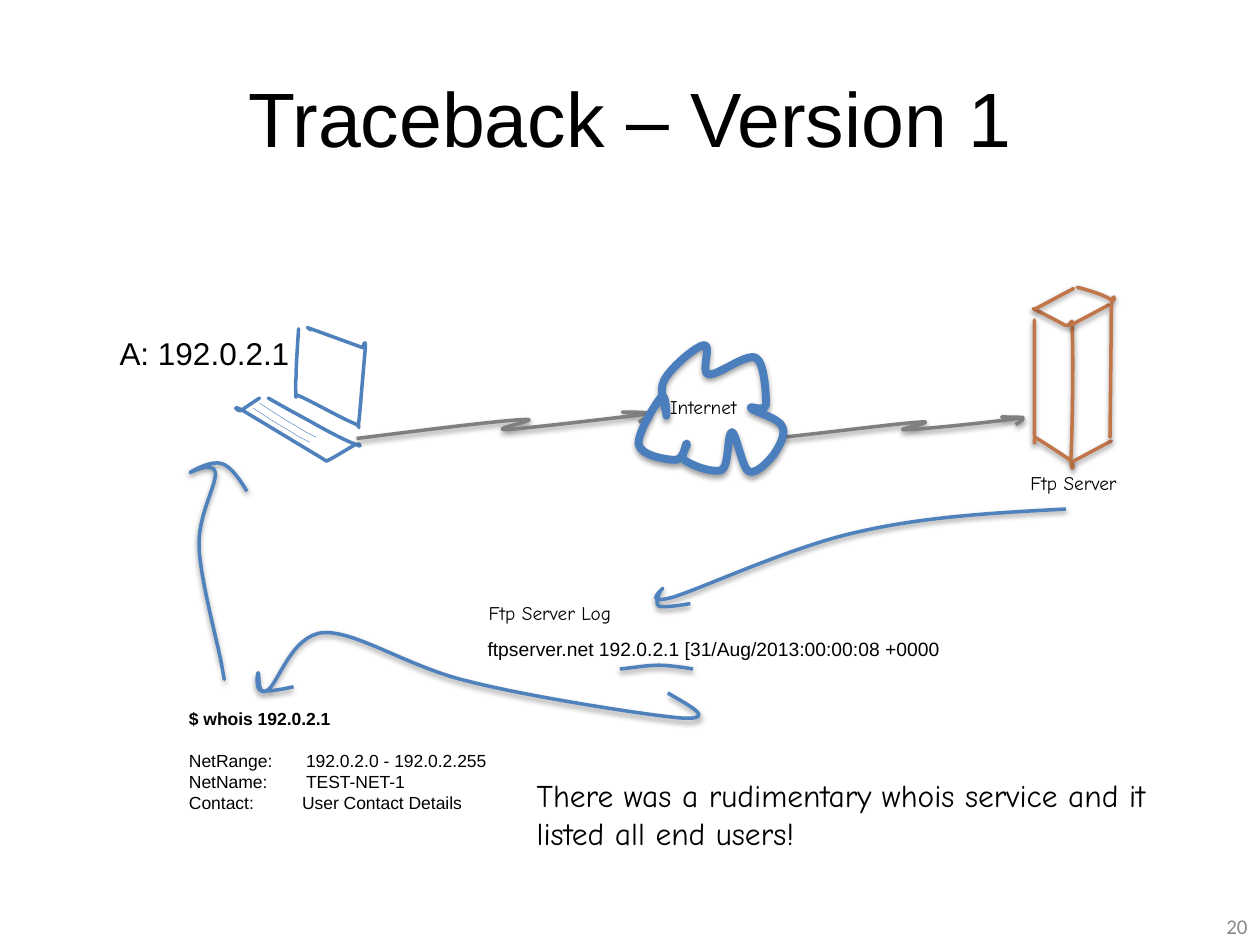
from dataclasses import dataclass

from lxml import etree
from pptx import Presentation
from pptx.dml.color import RGBColor
from pptx.enum.shapes import MSO_CONNECTOR
from pptx.enum.text import MSO_ANCHOR, MSO_AUTO_SIZE, PP_ALIGN
from pptx.oxml.ns import qn
from pptx.util import Cm, Pt

STRAIGHT = MSO_CONNECTOR.STRAIGHT
MIDDLE, TOP = MSO_ANCHOR.MIDDLE, MSO_ANCHOR.TOP
LEFT, CENTER, RIGHT = PP_ALIGN.LEFT, PP_ALIGN.CENTER, PP_ALIGN.RIGHT
FIT, FIXED = MSO_AUTO_SIZE.SHAPE_TO_FIT_TEXT, MSO_AUTO_SIZE.NONE
GRID = Cm(2.54) // 100


@dataclass(frozen=True)
class Theme:
    """Colours, fonts, type sizes and line widths."""
    ink: str = "000000"
    muted: str = "898989"
    blue: str = "4F81BD"
    cloud: str = "4B7EBC"
    wire: str = "7F7F7F"
    server: str = "C1764A"
    sans: str = "Arial"
    hand: str = "Comic Neue"
    page: str = "Calibri"
    title: int = 44
    large: int = 18
    number: int = 12
    label: int = 11
    small: int = 10
    line: float = 2
    thick: float = 4.5
    thin: float = 0.25


T = Theme()

SCREEN = [(237, 261), (236, 276, 235, 290, 235, 299), (234, 308, 235, 312, 235, 315),
          (236, 317, 231, 311, 239, 315), (246, 318, 273, 333, 281, 336),
          (288, 339, 283, 343, 285, 333), (286, 323, 289, 286, 290, 276),
          (290, 267, 288, 276, 288, 276), (244, 260), (244, 260), (247, 262)]
BASE = [(213, 316), (225, 323, 238, 330, 249, 336), (261, 343, 277, 351, 283, 353),
        (288, 356, 286, 351, 282, 353), (278, 355, 264, 364, 259, 366), (256, 364),
        (193, 326), (182, 320, 189, 327, 191, 326), (194, 324, 206, 316, 206, 316)]
KEYS = [(201, 324), (212, 331, 222, 338, 230, 342), (237, 347, 246, 351, 246, 351)]
WIRES = [
    [(283, 348), (339, 341, 395, 334, 415, 333), (435, 332, 386, 341, 402, 341),
     (417, 340, 495, 331, 510, 329), (526, 327, 494, 327, 494, 327),
     (495, 327, 512, 328, 514, 329), (516, 330, 507, 335, 507, 335)],
    [(622, 347), (668, 342, 714, 336, 731, 335), (747, 334, 706, 342, 719, 341),
     (732, 341, 796, 334, 809, 332), (821, 331, 795, 331, 795, 331),
     (796, 331, 810, 331, 812, 332), (813, 333, 806, 337, 806, 337)],
]
CLOUD = [(608, 321), (608, 314, 607, 288, 600, 284), (592, 280, 569, 299, 562, 297),
         (556, 296, 565, 273, 559, 274), (553, 274, 532, 292, 527, 302),
         (522, 311, 530, 328, 529, 330), (529, 332, 529, 311, 525, 315),
         (521, 319, 505, 345, 507, 353), (509, 362, 530, 365, 536, 365),
         (543, 365, 544, 352, 545, 352), (547, 352, 539, 362, 543, 365),
         (548, 369, 566, 376, 573, 373), (579, 369, 577, 343, 581, 343),
         (584, 343, 589, 371, 594, 374), (600, 377, 609, 367, 614, 361),
         (618, 355, 624, 345, 621, 339), (619, 332, 599, 327, 596, 324),
         (594, 321, 607, 328, 608, 321)]
FRONT = [(821, 254), (821, 291, 821, 329, 821, 345), (822, 360, 819, 344, 823, 348),
         (828, 351, 845, 362, 849, 365), (854, 367, 850, 380, 850, 363),
         (851, 346, 852, 281, 851, 264), (851, 246, 851, 261, 845, 258),
         (840, 255, 820, 245, 820, 245)]
SIDE = [(855, 228), (867, 231, 878, 235, 882, 238), (887, 241, 883, 227, 882, 245),
        (882, 263, 881, 347, 881, 347)]
EDGES = [(850, 258), (852, 366), (822, 245)]
TRACES = [
    [(846, 404), (790, 407, 734, 410, 682, 422), (630, 433, 560, 466, 534, 474),
     (508, 481, 528, 466, 526, 467), (524, 468, 519, 479, 523, 481),
     (527, 483, 548, 479, 548, 479)],
    [(492, 531), (503, 530, 513, 528, 523, 528), (533, 528, 550, 531, 550, 531)],
    [(530, 550), (549, 561, 568, 571, 542, 570), (516, 568, 420, 553, 373, 541),
     (325, 530, 284, 501, 257, 502), (231, 504, 221, 543, 212, 548),
     (204, 554, 206, 534, 205, 534), (204, 534, 203, 547, 207, 548),
     (212, 550, 233, 545, 233, 545)],
]
RETURN = [(177, 534), (178, 539, 179, 545, 176, 528), (173, 511, 159, 460, 158, 434),
          (157, 409, 172, 385, 171, 375), (169, 365, 150, 376, 151, 375),
          (152, 374, 168, 365, 176, 368), (183, 370, 190, 380, 196, 390)]


def bend(shape, rows):
    """Turn the straight segments that have handles into cubic curves."""
    segs = list(shape._element.iter(qn("a:lnTo")))
    for seg, row in zip(segs, rows[1:]):
        if len(row) == 6:
            seg.tag = qn("a:cubicBezTo")
            for i in (0, 1):
                x, y = row[2 * i:2 * i + 2]
                knob = etree.Element(qn("a:pt"), x=str(x * GRID - shape.left),
                                     y=str(y * GRID - shape.top))
                seg.insert(i, knob)


def ink(shape, hue, width, shade, cap="flat"):
    """Set the line of a shape and its optional soft shadow."""
    shape.line.color.rgb = RGBColor.from_string(hue)
    shape.line.width = Pt(width)
    prop = shape._element.spPr
    prop.find(qn("a:ln")).set("cap", cap)
    fx = etree.SubElement(prop, qn("a:effectLst"))
    if shade:
        blur = etree.SubElement(fx, qn("a:outerShdw"), blurRad="40000", dist="20000",
                                dir="5400000", rotWithShape="0")
        tone = etree.SubElement(blur, qn("a:srgbClr"), val=T.ink)
        etree.SubElement(tone, qn("a:alpha"), val="38000")


def sketch(shapes, rows, hue, width=T.line, shade=True, cap="flat", close=False):
    """Draw one unfilled hand-drawn stroke."""
    ends = [(row[-2] * GRID, row[-1] * GRID) for row in rows]
    pen = shapes.build_freeform(*ends[0])
    pen.add_line_segments(ends[1:], close=close)
    shape = pen.convert_to_shape()
    bend(shape, rows)
    shape.fill.background()
    ink(shape, hue, width, shade, cap)


def edge(shapes, x, y):
    """Draw one slanted edge of the server."""
    ends = [v * GRID for v in (x, y, x + 30, y - 16)]
    ink(shapes.add_connector(STRAIGHT, *ends), T.server, T.line, True, "rnd")


def write(para, text, size, font=T.sans, hue=T.ink, bold=False):
    """Add one run to a paragraph."""
    run = para.add_run()
    run.text = text
    run.font.name, run.font.size, run.font.bold = font, Pt(size), bold
    run.font.color.rgb = RGBColor.from_string(hue)


def box(slide, place, wrap=False, fit=FIT, anchor=TOP, align=LEFT):
    """Add a text box and return its frame."""
    frame = slide.shapes.add_textbox(*(Cm(v) for v in place)).text_frame
    frame.word_wrap, frame.auto_size = wrap, fit
    frame.vertical_anchor = anchor
    frame.paragraphs[0].alignment = align
    return frame


def label(slide, place, text, size=T.label, font=T.sans, hue=T.ink, **look):
    """Add a text box with a single run."""
    write(box(slide, place, **look).paragraphs[0], text, size, font, hue)


def laptop(slide):
    """Draw the laptop as a group."""
    parts = slide.shapes.add_group_shape().shapes
    for rows in (SCREEN, BASE):
        sketch(parts, rows, T.blue, shade=False, cap="rnd")
    for dx, dy in ((0, 0), (5, -4)):
        rows = [tuple(v + (dy if i % 2 else dx) for i, v in enumerate(row)) for row in KEYS]
        sketch(parts, rows, T.blue, T.thin, shade=False)


def server(slide):
    """Draw the server as a group."""
    parts = slide.shapes.add_group_shape().shapes
    sketch(parts, FRONT, T.server, cap="rnd")
    for x, y in EDGES:
        edge(parts, x, y)
    sketch(parts, SIDE, T.server, cap="rnd")


def lookup(slide):
    """Write the whois query and its answer."""
    frame = box(slide, (3.56, 14.15, 6.6, 2.82))
    head = frame.paragraphs[0]
    write(head, "$ whois 192.0.2.1", T.small, bold=True)
    head.space_after = Pt(12)
    for key, value, stop in (("NetRange:", "192.0.2.0 - 192.0.2.255", 2.36),
                             ("NetName:", "TEST-NET-1", 2.36),
                             ("Contact:", "User Contact Details", 2.28)):
        para = frame.add_paragraph()
        stops = etree.SubElement(para._p.get_or_add_pPr(), qn("a:tabLst"))
        etree.SubElement(stops, qn("a:tab"), pos=str(Cm(stop)), algn="l")
        write(para, f"{key}\t{value}", T.small)


def main():
    """Build and save the slide."""
    deck = Presentation()
    deck.slide_width, deck.slide_height = Cm(25.4), Cm(19.05)
    slide = deck.slides.add_slide(deck.slide_layouts[6])
    label(slide, (0.74, 0.76, 23.93, 3.18), "Traceback – Version 1", T.title,
          wrap=True, fit=FIXED, anchor=MIDDLE, align=CENTER)
    label(slide, (19.48, 18.16, 5.92, 1.02), "20", T.number, T.page, T.muted,
          wrap=True, fit=FIXED, anchor=MIDDLE, align=RIGHT)
    laptop(slide)
    label(slide, (2.16, 6.6, 4.01, 1.02), "A: 192.0.2.1", T.large)
    for rows in WIRES:
        sketch(slide.shapes, rows, T.wire)
    sketch(slide.shapes, CLOUD, T.cloud, T.thick, close=True)
    server(slide)
    label(slide, (20.52, 9.37, 2.77, 0.74), "Ftp Server", font=T.hand)
    label(slide, (13.26, 7.85, 2.16, 0.74), "Internet", font=T.hand)
    label(slide, (9.58, 12.73, 9.7, 0.74),
          "ftpserver.net 192.0.2.1 [31/Aug/2013:00:00:08 +0000")
    label(slide, (9.6, 11.99, 3.71, 0.74), "Ftp Server Log", font=T.hand)
    lookup(slide)
    for rows in TRACES:
        sketch(slide.shapes, rows, T.blue)
    label(slide, (10.57, 15.52, 13.92, 1.8),
          "There was a rudimentary whois service and it listed all end users!",
          T.large, T.hand, wrap=True)
    sketch(slide.shapes, RETURN, T.blue)
    deck.save("out.pptx")


if __name__ == "__main__":
    main()
